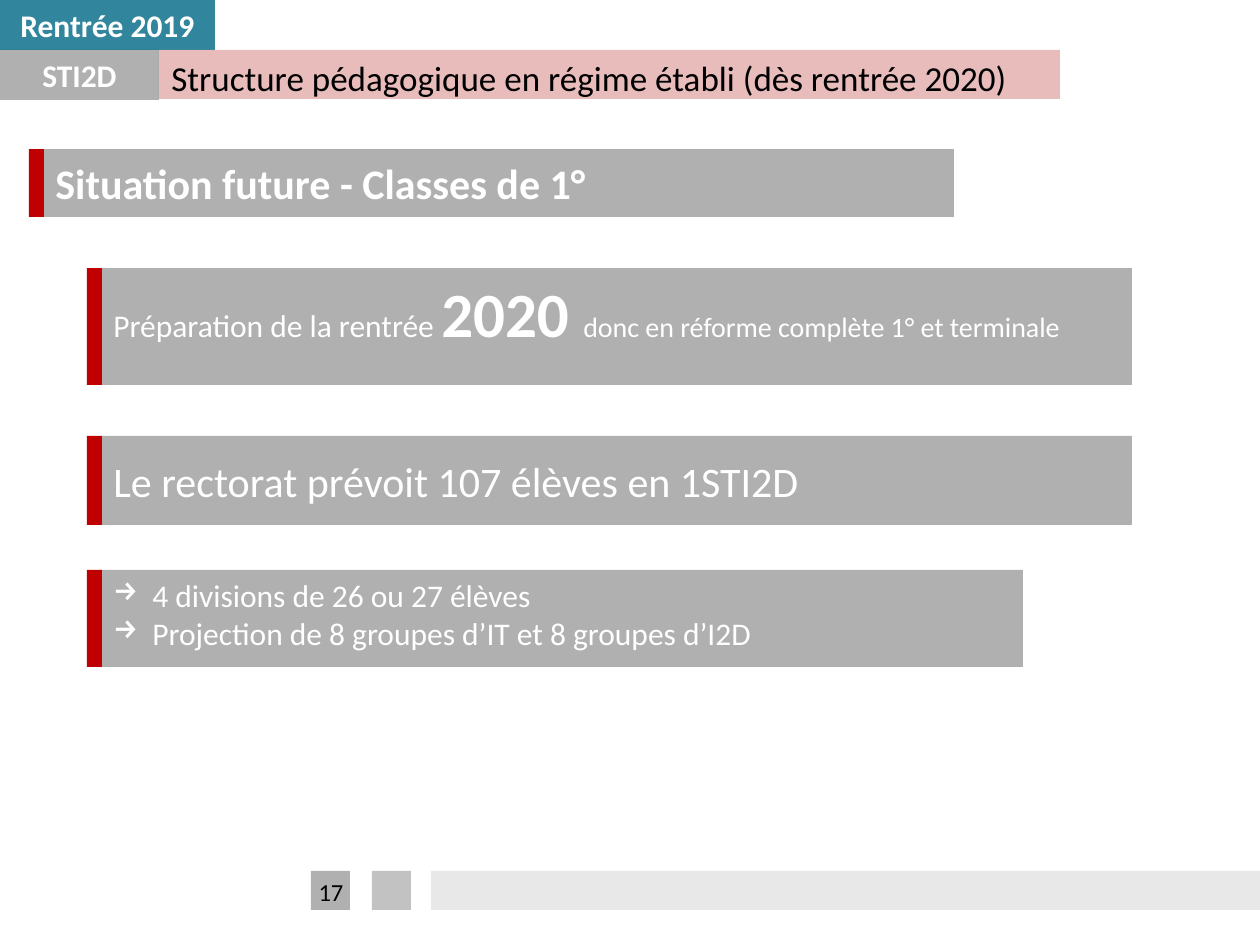
from lxml import etree
from pptx import Presentation
from pptx.dml.color import RGBColor
from pptx.enum.shapes import MSO_SHAPE
from pptx.enum.text import MSO_ANCHOR, PP_ALIGN
from pptx.oxml.ns import qn
from pptx.util import Emu, Pt

RECTANGLE = MSO_SHAPE.RECTANGLE
TOP, MIDDLE = MSO_ANCHOR.TOP, MSO_ANCHOR.MIDDLE
LEFT, CENTER = PP_ALIGN.LEFT, PP_ALIGN.CENTER

BLACK = RGBColor(0x00, 0x00, 0x00)
WHITE = RGBColor(0xFF, 0xFF, 0xFF)
TEAL = RGBColor(0x31, 0x85, 0x9C)
ROSE = RGBColor(0xD9, 0x96, 0x94)
RED = RGBColor(0xC0, 0x00, 0x00)

FONT = "Calibri"
PX = 914400 / 126
SLIDE_SIZE = (1260, 945)
ACCENT_WIDTH = 15
BULLET_INDENT = 39
GREY_OPACITY = 31

# A paragraph is a list of runs: (text, size in points, bold)
# Plain blocks: box, colour, opacity %, paragraphs
BLOCKS = [
    ((0, 0, 215, 50), TEAL, 100, [[("Rentrée 2019", 18, True)]]),
    ((159, 50, 901, 49), ROSE, 63, []),
    ((372, 871, 39, 39), BLACK, 24, []),
    ((431, 871, 829, 39), BLACK, 9, []),
    ((311, 871, 39, 39), BLACK, GREY_OPACITY, []),
    ((0, 50, 159, 50), BLACK, GREY_OPACITY, [[("STI2D", 18, True)]]),
]

# Labels: box, text, size, alignment, anchor
LABELS = [
    ((159, 50, 901, 55), "Structure pédagogique en régime établi (dès rentrée 2020)",
     20, LEFT, MIDDLE),
    ((295, 871, 72, 50), "17", 14, CENTER, TOP),
]

# Banners with a red accent on the left: box, anchor, bullet, paragraphs
BANNERS = [
    ((101, 570, 922, 97), TOP, "→", [
        [("4 divisions de 26 ou 27 élèves", 18, False)],
        [("Projection de 8 groupes d’IT et 8 groupes d’I2D", 18, False)],
    ]),
    ((101, 268, 1031, 117), TOP, None, [
        [("Préparation de la rentrée ", 18, False), ("2020 ", 36, True),
         ("donc en réforme complète 1° et terminale", 16, False)],
    ]),
    ((101, 436, 1031, 89), MIDDLE, None,
     [[("Le rectorat prévoit 107 élèves en 1STI2D", 24, False)]]),
    ((43, 149, 911, 68), MIDDLE, None,
     [[("Situation future - Classes de 1°", 24, True)]]),
]


def px(value):
    return Emu(round(value * PX))


def add_rectangle(slide, box, color, opacity=100):
    shape = slide.shapes.add_shape(RECTANGLE, *map(px, box))
    shape.shadow.inherit = False
    shape.line.fill.background()
    shape.fill.solid()
    shape.fill.fore_color.rgb = color
    if opacity < 100:
        color_element = shape.fill._xPr.find(qn("a:solidFill"))[0]
        etree.SubElement(color_element, qn("a:alpha"), val=str(opacity * 1000))
    return shape


def add_bullet(paragraph, character):
    properties = paragraph._p.get_or_add_pPr()
    properties.set("marL", str(px(BULLET_INDENT)))
    properties.set("indent", str(-px(BULLET_INDENT)))
    etree.SubElement(properties, qn("a:buChar"), char=character)


def write(shape, paragraphs, color, alignment, anchor, bullet=None):
    text_frame = shape.text_frame
    text_frame.word_wrap = True
    text_frame.vertical_anchor = anchor
    for index, runs in enumerate(paragraphs):
        paragraph = text_frame.add_paragraph() if index else text_frame.paragraphs[0]
        paragraph.alignment = alignment
        if bullet:
            add_bullet(paragraph, bullet)
        for text, size, bold in runs:
            run = paragraph.add_run()
            run.text = text
            run.font.name = FONT
            run.font.size = Pt(size)
            run.font.bold = bold
            run.font.color.rgb = color


def add_banner(slide, box, anchor, bullet, paragraphs):
    left, top, _, height = box
    body = add_rectangle(slide, box, BLACK, GREY_OPACITY)
    write(body, paragraphs, WHITE, LEFT, anchor, bullet)
    add_rectangle(slide, (left - ACCENT_WIDTH + 1, top, ACCENT_WIDTH, height), RED)


def main():
    presentation = Presentation()
    presentation.slide_width, presentation.slide_height = map(px, SLIDE_SIZE)
    slide = presentation.slides.add_slide(presentation.slide_layouts[6])

    for box, color, opacity, paragraphs in BLOCKS:
        block = add_rectangle(slide, box, color, opacity)
        write(block, paragraphs, WHITE, CENTER, MIDDLE)

    for box, text, size, alignment, anchor in LABELS:
        label = slide.shapes.add_textbox(*map(px, box))
        write(label, [[(text, size, False)]], BLACK, alignment, anchor)

    for banner in BANNERS:
        add_banner(slide, *banner)

    presentation.save("out.pptx")


if __name__ == "__main__":
    main()
